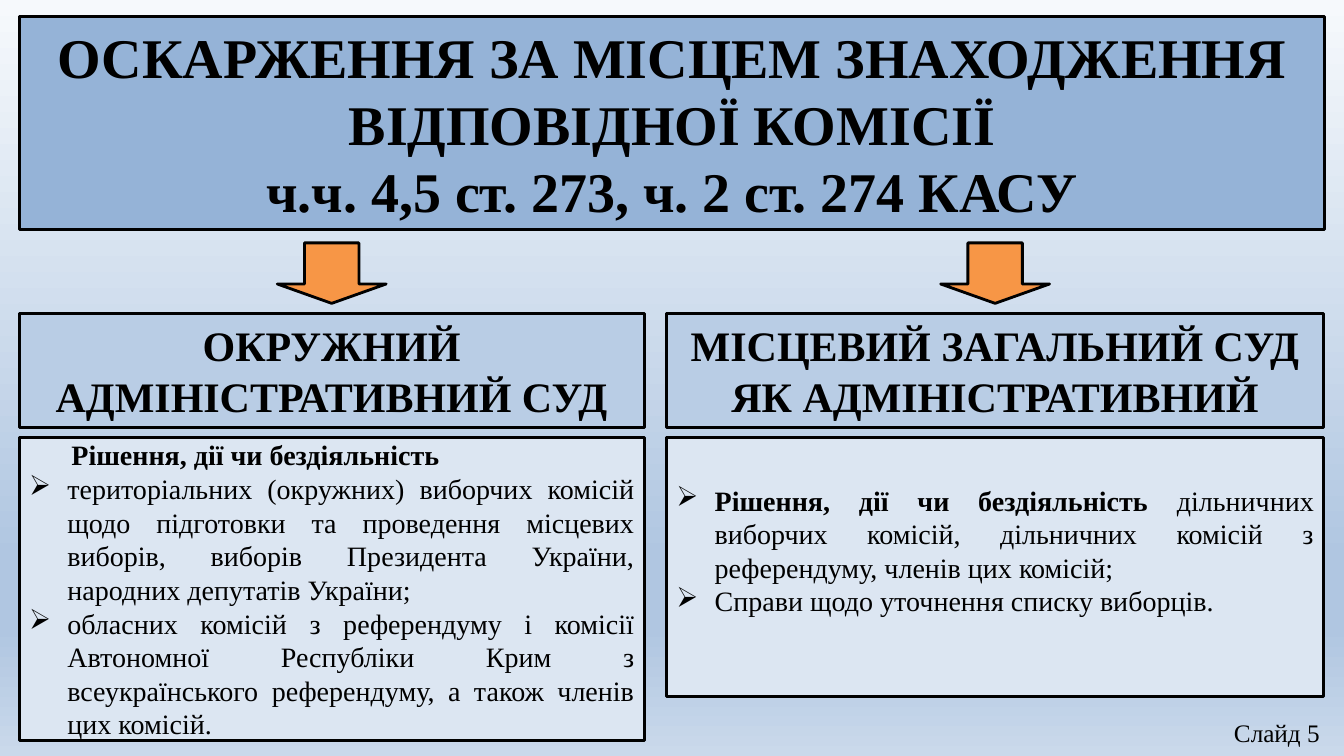
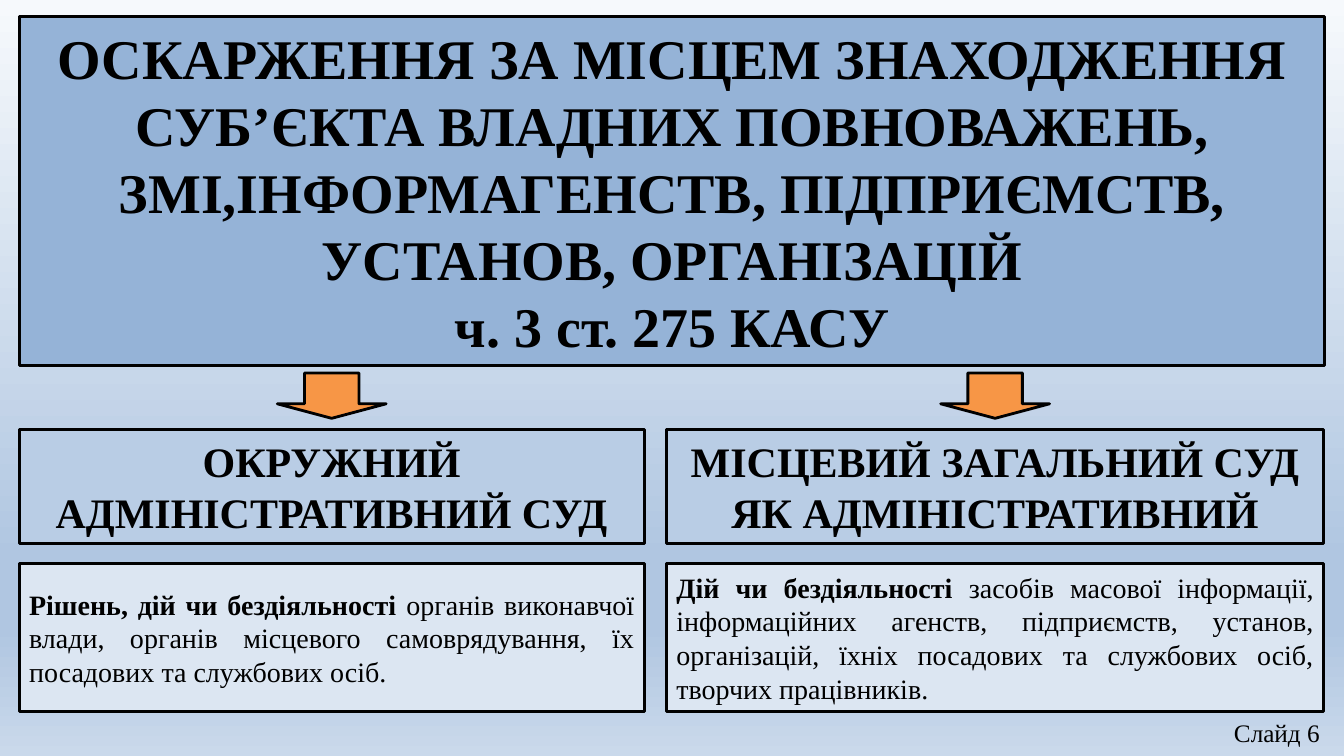
from dataclasses import dataclass

from lxml import etree
from pptx import Presentation
from pptx import util as u
from pptx.dml.color import RGBColor
from pptx.enum import shapes, text
from pptx.oxml import ns


@dataclass(frozen=True)
class Theme:
    font: str = "Times New Roman"
    ink: str = "000000"
    title_fill: str = "95B3D7"
    court_fill: str = "B9CDE5"
    body_fill: str = "DCE6F2"
    arrow_fill: str = "F79646"
    backdrop: tuple = ((0, "F6F9FC"), (74, "B0C6E1"), (83, "B0C6E1"), (100, "CAD9EB"))
    title_size: int = 40
    court_size: int = 30
    body_size: int = 20
    footer_size: int = 18
    title_line: float = 2.25
    line: float = 2


@dataclass(frozen=True)
class Item:
    bold: str = ""
    plain: str = ""
    bullet: bool = False
    first_indent: float = 0


MARGIN = 0.19
TITLE_TOP, TITLE_WIDTH = 0.16, 12.95
COURT_HEIGHT = 1.13
ARROW_WIDTH = 1.08
BULLET_INDENT = 0.38
COLUMNS = ((MARGIN, 6.2), (6.61, 6.52))
COURTS = ("ОКРУЖНИЙ АДМІНІСТРАТИВНИЙ СУД", "МІСЦЕВИЙ ЗАГАЛЬНИЙ СУД ЯК АДМІНІСТРАТИВНИЙ")


class Deck:
    def __init__(self, theme):
        self.theme = theme
        self.slide = None
        self.presentation = Presentation()
        self.presentation.slide_width = u.Inches(13.33)
        self.presentation.slide_height = u.Inches(7.5)
        self.paint_backdrop()

    def paint_backdrop(self):
        master = self.presentation.slide_master
        fill = master.background.fill
        fill.gradient()
        fill.gradient_angle = 270
        stops = next(master.element.iter(ns.qn("a:gsLst")))
        for stop in list(stops):
            stops.remove(stop)
        for percent, color in self.theme.backdrop:
            stop = etree.SubElement(stops, ns.qn("a:gs"), pos=str(percent * 1000))
            etree.SubElement(stop, ns.qn("a:srgbClr"), val=color)

    def add_slide(self):
        self.slide = self.presentation.slides.add_slide(self.presentation.slide_layouts[6])

    def shape(self, kind, box, fill, line):
        shape = self.slide.shapes.add_shape(kind, *map(u.Inches, box))
        shape.shadow.inherit = False
        shape.fill.solid()
        shape.fill.fore_color.rgb = RGBColor.from_string(fill)
        shape.line.color.rgb = RGBColor.from_string(self.theme.ink)
        shape.line.width = u.Pt(line)
        return shape

    def style(self, paragraph, size, bold, alignment):
        paragraph.alignment = alignment
        font = paragraph.font
        font.name = self.theme.font
        font.size = u.Pt(size)
        font.bold = bold
        font.color.rgb = RGBColor.from_string(self.theme.ink)

    def paragraphs(self, frame, count):
        return [frame.paragraphs[0]] + [frame.add_paragraph() for _ in range(count - 1)]

    def heading(self, box, lines, fill, size, line):
        frame = self.shape(shapes.MSO_SHAPE.RECTANGLE, box, fill, line).text_frame
        frame.word_wrap = True
        for paragraph, words in zip(self.paragraphs(frame, len(lines)), lines):
            paragraph.text = words
            self.style(paragraph, size, True, text.PP_ALIGN.CENTER)

    def title(self, height, lines):
        box = (MARGIN, TITLE_TOP, TITLE_WIDTH, height)
        self.heading(box, lines, self.theme.title_fill, self.theme.title_size, self.theme.title_line)

    def court(self, box, name):
        self.heading(box, [name], self.theme.court_fill, self.theme.court_size, self.theme.line)

    def arrow(self, box):
        arrow = self.shape(shapes.MSO_SHAPE.DOWN_ARROW, box, self.theme.arrow_fill, self.theme.line)
        arrow.adjustments[0] = 0.5
        arrow.adjustments[1] = 0.32

    def indent(self, paragraph, item):
        properties = paragraph._p.get_or_add_pPr()
        if item.bullet:
            properties.set("marL", str(u.Inches(BULLET_INDENT)))
            properties.set("indent", str(-u.Inches(BULLET_INDENT)))
            etree.SubElement(properties, ns.qn("a:buChar"), char="➢")
        elif item.first_indent:
            properties.set("indent", str(u.Inches(item.first_indent)))

    def body(self, box, items, bottom_inset):
        shape = self.shape(shapes.MSO_SHAPE.RECTANGLE, box, self.theme.body_fill, self.theme.line)
        frame = shape.text_frame
        frame.word_wrap = True
        frame.margin_bottom = u.Inches(bottom_inset)
        for paragraph, item in zip(self.paragraphs(frame, len(items)), items):
            self.indent(paragraph, item)
            self.style(paragraph, self.theme.body_size, False, text.PP_ALIGN.JUSTIFY)
            for words, bold in ((item.bold, True), (item.plain, False)):
                if words:
                    run = paragraph.add_run()
                    run.text = words
                    run.font.bold = bold

    def footer(self, words):
        box = self.slide.shapes.add_textbox(*map(u.Inches, (12.14, 7.07, 1.19, 0.43)))
        box.text_frame.word_wrap = True
        paragraph = box.text_frame.paragraphs[0]
        paragraph.text = words
        self.style(paragraph, self.theme.footer_size, False, text.PP_ALIGN.LEFT)

    def appeal_slide(self, number, title, title_height, arrow_row, court_top, body_top, bodies):
        self.add_slide()
        self.title(title_height, title)
        arrow_top, arrow_height = arrow_row
        for (left, width), name, (height, bottom_inset, items) in zip(COLUMNS, COURTS, bodies):
            self.arrow((left + (width - ARROW_WIDTH) / 2, arrow_top, ARROW_WIDTH, arrow_height))
            self.court((left, court_top, width, COURT_HEIGHT), name)
            self.body((left, body_top, width, height), items, bottom_inset)
        self.footer(f"Слайд {number}")


def main():
    deck = Deck(Theme())
    deck.appeal_slide(
        number=5,
        title=["ОСКАРЖЕННЯ ЗА МІСЦЕМ ЗНАХОДЖЕННЯ ВІДПОВІДНОЇ КОМІСІЇ",
               "ч.ч. 4,5 ст. 273, ч. 2 ст. 274 КАСУ"],
        title_height=2.12,
        arrow_row=(2.41, 0.6),
        court_top=3.11,
        body_top=4.34,
        bodies=[
            (3.01, 0.05, [
                Item(bold="Рішення, дії чи бездіяльність", first_indent=0.42),
                Item(plain="територіальних (окружних) виборчих комісій щодо підготовки та проведення "
                           "місцевих виборів, виборів Президента України, народних депутатів України;",
                     bullet=True),
                Item(plain="обласних комісій з референдуму і комісії Автономної Республіки Крим з "
                           "всеукраїнського референдуму, а також членів цих комісій.",
                     bullet=True),
            ]),
            (2.57, 0.38, [
                Item("Рішення, дії чи бездіяльність ",
                     "дільничних виборчих комісій, дільничних комісій з референдуму, "
                     "членів цих комісій;", bullet=True),
                Item(plain="Справи щодо уточнення списку виборців.", bullet=True),
            ]),
        ],
    )
    deck.appeal_slide(
        number=6,
        title=["ОСКАРЖЕННЯ ЗА МІСЦЕМ ЗНАХОДЖЕННЯ СУБ’ЄКТА ВЛАДНИХ ПОВНОВАЖЕНЬ, "
               "ЗМІ,ІНФОРМАГЕНСТВ, ПІДПРИЄМСТВ, УСТАНОВ, ОРГАНІЗАЦІЙ",
               "ч. 3 ст. 275 КАСУ"],
        title_height=3.47,
        arrow_row=(3.7, 0.45),
        court_top=4.26,
        body_top=5.59,
        bodies=[
            (1.47, 0.05, [
                Item("Рішень, дій чи бездіяльності ",
                     "органів виконавчої влади, органів місцевого самоврядування, "
                     "їх посадових та службових осіб."),
            ]),
            (1.47, 0.05, [
                Item("Дій чи бездіяльності ",
                     "засобів масової інформації, інформаційних агенств, підприємств, установ, "
                     "організацій, їхніх посадових та службових осіб, творчих працівників."),
            ]),
        ],
    )
    deck.presentation.save("out.pptx")


if __name__ == "__main__":
    main()
